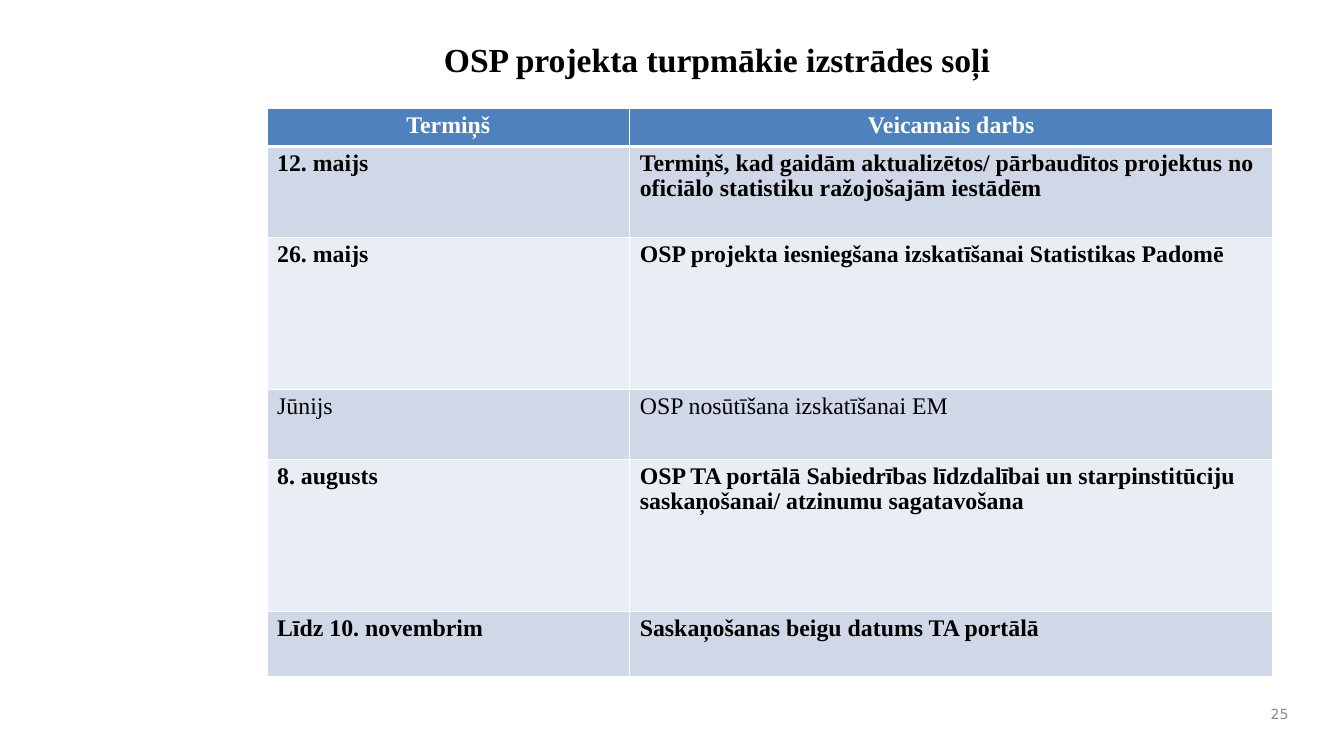
from lxml.etree import SubElement
from pptx import Presentation
from pptx.dml.color import RGBColor
from pptx.enum.text import MSO_ANCHOR as Anchor, PP_ALIGN as Align
from pptx.oxml.ns import qn
from pptx.util import Cm, Pt

BLACK = RGBColor(0x00, 0x00, 0x00)
WHITE = RGBColor(0xFF, 0xFF, 0xFF)
GREY = RGBColor(0x89, 0x89, 0x89)
HEADER_BLUE = RGBColor(0x4F, 0x81, 0xBD)
BAND_DARK = RGBColor(0xD0, 0xD8, 0xE8)
BAND_LIGHT = RGBColor(0xE9, 0xED, 0xF4)
SERIF = "Times New Roman"
SANS = "DejaVu Sans"


def add_text(para, text, font, size, color, bold, align):
    para.alignment = align
    span = para.add_run()
    span.text = text
    span.font.name = font
    span.font.size = Pt(size)
    span.font.color.rgb = color
    span.font.bold = bold


def add_border(cell, side, width):
    line = SubElement(cell._tc.get_or_add_tcPr(), qn(f"a:ln{side}"), w=str(Pt(width)))
    fill = SubElement(line, qn("a:solidFill"))
    SubElement(fill, qn("a:srgbClr"), val=str(WHITE))


deck = Presentation()
deck.slide_width = Cm(33.87)
deck.slide_height = Cm(19.05)
page = deck.slides.add_slide(deck.slide_layouts[5])

title = page.shapes.title
title.left, title.top, title.width, title.height = Cm(9.6), Cm(0.86), Cm(16.94), Cm(1.27)
title.text_frame.vertical_anchor = Anchor.TOP
add_text(title.text_frame.paragraphs[0], "OSP projekta turpmākie izstrādes soļi",
         SERIF, 24, BLACK, True, Align.CENTER)

steps = [
    (0.97, True, "Termiņš", "Veicamais darbs"),
    (2.29, True, "12. maijs",
     "Termiņš, kad gaidām aktualizētos/ pārbaudītos projektus no "
     "oficiālo statistiku ražojošajām iestādēm"),
    (3.84, True, "26. maijs", "OSP projekta iesniegšana izskatīšanai Statistikas Padomē"),
    (1.75, False, "Jūnijs", "OSP nosūtīšana izskatīšanai EM"),
    (3.84, True, "8. augusts",
     "OSP TA portālā Sabiedrības līdzdalībai un starpinstitūciju "
     "saskaņošanai/ atzinumu sagatavošana"),
    (1.63, True, "Līdz 10. novembrim", "Saskaņošanas beigu datums TA portālā"),
]
column_widths = [9.14, 16.21]
table = page.shapes.add_table(
    len(steps), len(column_widths), Cm(6.73), Cm(2.72),
    Cm(sum(column_widths)), Cm(sum(step[0] for step in steps))).table
for column, width in zip(table.columns, column_widths):
    column.width = Cm(width)

for row, (height, bold, *texts) in enumerate(steps):
    table.rows[row].height = Cm(height)
    header = row == 0
    band = HEADER_BLUE if header else BAND_DARK if row % 2 else BAND_LIGHT
    for column, text in enumerate(texts):
        cell = table.cell(row, column)
        for side in "LRTB":
            thick = (row, side) in [(0, "B"), (1, "T")]
            add_border(cell, side, 3 if thick else 1)
        cell.fill.solid()
        cell.fill.fore_color.rgb = band
        para = cell.text_frame.paragraphs[0]
        para.line_spacing = 0.95
        add_text(para, text, SERIF, 17, WHITE if header else BLACK, bold,
                 Align.CENTER if header else Align.LEFT)

number_box = page.shapes.add_textbox(Cm(31.6), Cm(17.58), Cm(1.12), Cm(0.84))
number_box.text_frame.word_wrap = True
number_box.text_frame.vertical_anchor = Anchor.MIDDLE
add_text(number_box.text_frame.paragraphs[0], "25", SANS, 10, GREY, False, Align.RIGHT)

deck.save("out.pptx")
